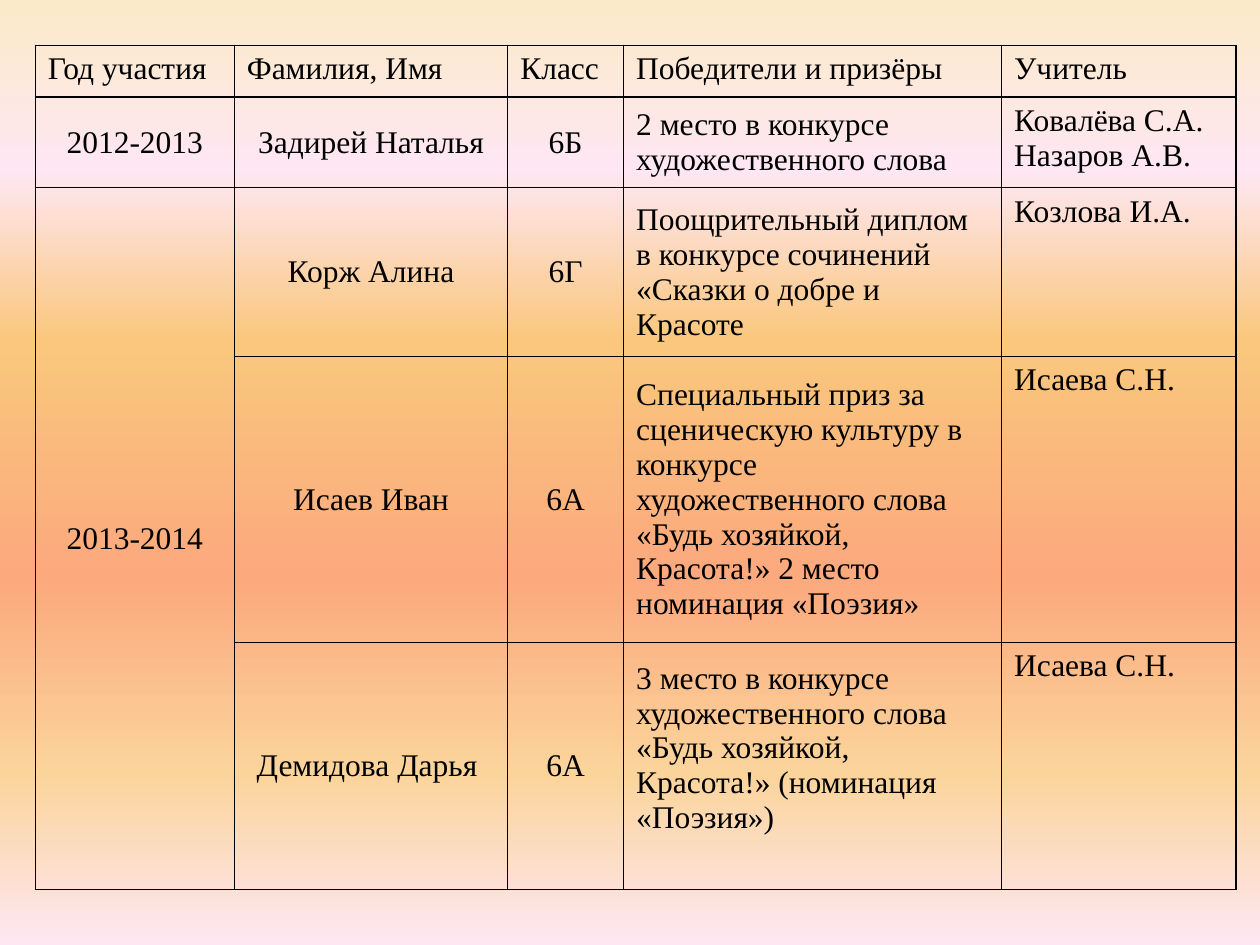
"""Build a slide with a table of contest winners on a gradient background."""
import dataclasses
import typing

import lxml.etree
import pptx
import pptx.dml.color
import pptx.enum.text
import pptx.oxml.ns
import pptx.util

RGBColor = pptx.dml.color.RGBColor
ALIGN = pptx.enum.text.PP_ALIGN
ANCHOR = pptx.enum.text.MSO_ANCHOR
qn = pptx.oxml.ns.qn

INK = RGBColor(0x00, 0x00, 0x00)
CREAM = RGBColor(0xFB, 0xEA, 0xC7)
ROSE = RGBColor(0xFE, 0xE7, 0xF2)
AMBER = RGBColor(0xFA, 0xC7, 0x7D)
CORAL = RGBColor(0xFB, 0xA9, 0x7D)
SAND = RGBColor(0xFB, 0xD4, 0x9C)
SUNSET = ((0, CREAM), (18, ROSE), (36, AMBER), (61, CORAL), (82, SAND), (100, ROSE))

SLIDE_WIDTH, SLIDE_HEIGHT = pptx.util.Inches(10), pptx.util.Inches(7.5)
TABLE_LEFT, TABLE_TOP = pptx.util.Inches(0.28), pptx.util.Inches(0.36)
COLUMN_SHARES = (1.58, 2.17, 0.92, 3, 1.86)
ROW_SHARES = (0.41, 0.72, 1.34, 2.27, 1.96)
TABLE_WIDTH, TABLE_HEIGHT = pptx.util.Inches(9.53), pptx.util.Inches(6.7)
FONT_FORMAT = {"size": pptx.util.Pt(18), "name": "Times New Roman"}
PLAIN_TABLE = {"first_row": False, "horz_banding": False}
LEFT_TOP = (ALIGN.LEFT, ANCHOR.TOP)
CENTRED = (ALIGN.CENTER, ANCHOR.MIDDLE)
LEFT_MIDDLE = (ALIGN.LEFT, ANCHOR.MIDDLE)
COLUMN_PLACEMENTS = (CENTRED, CENTRED, CENTRED, LEFT_MIDDLE, LEFT_TOP)
HEADINGS = ("Год участия", "Фамилия, Имя", "Класс", "Победители и призёры", "Учитель")


@dataclasses.dataclass(frozen=True)
class Winner:
    """One row of the table."""

    year: str
    pupil: str
    form: str
    award: str
    teacher: str
    space_below: float = 0.05


WINNERS = (
    Winner("2012-2013", "Задирей Наталья", "6Б",
           "2 место в конкурсе художественного слова", "Ковалёва С.А.\nНазаров А.В."),
    Winner("2013-2014", "Корж Алина", "6Г",
           "Поощрительный диплом в конкурсе сочинений «Сказки о добре и Красоте",
           "Козлова И.А."),
    Winner("", "Исаев Иван", "6А",
           "Специальный приз за сценическую культуру в конкурсе художественного слова "
           "«Будь хозяйкой, Красота!» 2 место номинация «Поэзия»", "Исаева С.Н."),
    Winner("", "Демидова Дарья ", "6А",
           "3 место в конкурсе художественного слова «Будь хозяйкой, Красота!» "
           "(номинация «Поэзия»)", "Исаева С.Н.", 0.33),
)


def apply_format(target: typing.Any, values: dict[str, typing.Any]) -> None:
    """Set every named attribute on the target."""
    for key, value in values.items():
        setattr(target, key, value)


def add_colour(parent: typing.Any, colour: RGBColor) -> None:
    """Append an RGB colour element."""
    lxml.etree.SubElement(parent, qn("a:srgbClr"), val=str(colour))


def paint_background(slide: typing.Any) -> None:
    """Fill the background with the sunset gradient from top to bottom."""
    fill = slide.background.fill
    fill.gradient()
    fill.gradient_angle = 270
    stops = slide.element.find(".//" + qn("a:gsLst"))
    for stop in list(stops):
        stops.remove(stop)
    for percent, colour in SUNSET:
        add_colour(lxml.etree.SubElement(stops, qn("a:gs"), pos=str(percent * 1000)), colour)


def add_borders(cell: typing.Any) -> None:
    """Draw a one-point line on all four sides of the cell."""
    properties = cell._tc.get_or_add_tcPr()
    for index, side in enumerate(("a:lnL", "a:lnR", "a:lnT", "a:lnB")):
        line = lxml.etree.Element(qn(side), w=str(pptx.util.Pt(1)))
        add_colour(lxml.etree.SubElement(line, qn("a:solidFill")), INK)
        properties.insert(index, line)


def fill_cell(cell: typing.Any, text: str, placement: tuple, space_below: float = 0.05) -> None:
    """Write and format one table cell."""
    alignment, anchor = placement
    cell.fill.background()
    add_borders(cell)
    apply_format(cell, {"text": text, "vertical_anchor": anchor,
                        "margin_bottom": pptx.util.Inches(space_below)})
    for paragraph in cell.text_frame.paragraphs:
        paragraph.alignment = alignment
        apply_format(paragraph.font, FONT_FORMAT)
        for run in paragraph.runs:
            apply_format(run.font, FONT_FORMAT)
            run.font.color.rgb = INK


def add_winners_table(slide: typing.Any) -> None:
    """Add the table with its headings and winners."""
    table = slide.shapes.add_table(len(ROW_SHARES), len(COLUMN_SHARES), TABLE_LEFT, TABLE_TOP,
                                   TABLE_WIDTH, TABLE_HEIGHT).table
    apply_format(table, PLAIN_TABLE)
    for column, share in zip(table.columns, COLUMN_SHARES):
        column.width = int(TABLE_WIDTH * share / sum(COLUMN_SHARES))
    for row, share in zip(table.rows, ROW_SHARES):
        row.height = int(TABLE_HEIGHT * share / sum(ROW_SHARES))
    for column, heading in enumerate(HEADINGS):
        fill_cell(table.cell(0, column), heading, LEFT_TOP)
    for row, winner in enumerate(WINNERS, start=1):
        texts = (winner.year, winner.pupil, winner.form, winner.award, winner.teacher)
        for column, (text, placement) in enumerate(zip(texts, COLUMN_PLACEMENTS)):
            is_award = text == winner.award
            fill_cell(table.cell(row, column), text, placement,
                      winner.space_below if is_award else 0.05)
    table.cell(2, 0).merge(table.cell(len(WINNERS), 0))


def main() -> None:
    """Create and save the presentation."""
    deck = pptx.Presentation()
    apply_format(deck, {"slide_width": SLIDE_WIDTH, "slide_height": SLIDE_HEIGHT})
    slide = deck.slides.add_slide(deck.slide_layouts[6])
    paint_background(slide)
    add_winners_table(slide)
    deck.save("out.pptx")


if __name__ == "__main__":
    main()
